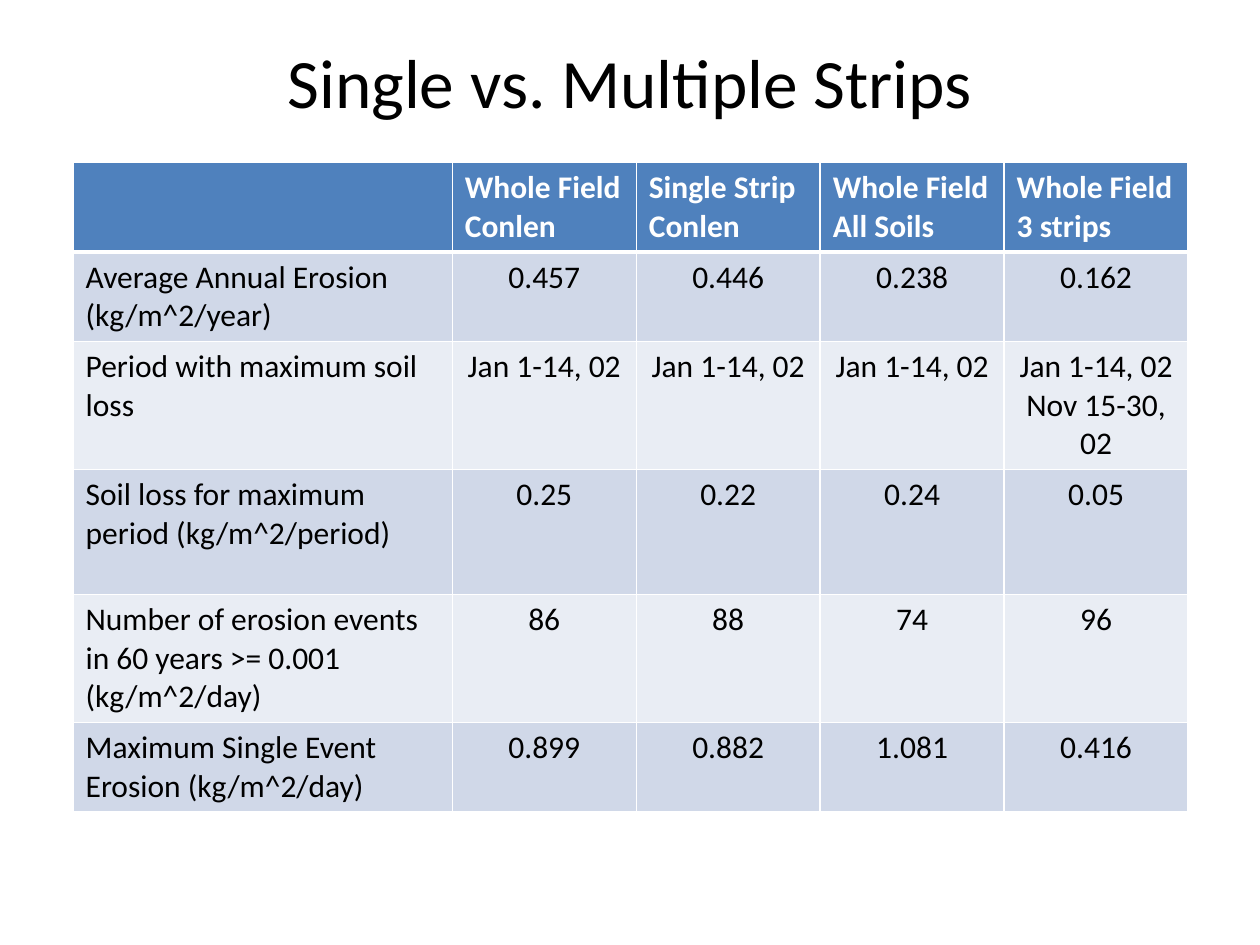
from typing import NamedTuple

from lxml.etree import SubElement
from pptx import Presentation
from pptx.dml.color import RGBColor
from pptx.enum.text import MSO_ANCHOR, MSO_AUTO_SIZE, PP_ALIGN
from pptx.oxml import parse_xml
from pptx.oxml.ns import nsdecls, qn
from pptx.util import Inches, Pt

FONT = "Calibri"
BLACK, WHITE = "000000", "FFFFFF"
HEADER_FILL = "4F81BD"
BAND_FILLS = ("D0D8E8", "E9EDF4")


class Measure(NamedTuple):
    label: str
    values: tuple[str, str, str, str]
    height: float


HEADINGS = ("", "Whole Field Conlen", "Single Strip Conlen",
            "Whole Field All Soils", "Whole Field 3 strips")
HEADER_HEIGHT = 0.71
MEASURES = (
    Measure("Average Annual Erosion (kg/m^2/year)",
            ("0.457", "0.446", "0.238", "0.162"), 0.69),
    Measure("Period with maximum soil loss",
            ("Jan 1-14, 02",) * 3 + ("Jan 1-14, 02 Nov 15-30, 02",), 0.69),
    Measure("Soil loss for maximum period (kg/m^2/period)",
            ("0.25", "0.22", "0.24", "0.05"), 0.99),
    Measure("Number of erosion events in 60 years >= 0.001 (kg/m^2/day)",
            ("86", "88", "74", "96"), 0.99),
    Measure("Maximum Single Event Erosion (kg/m^2/day)",
            ("0.899", "0.882", "1.081", "0.416"), 0.69),
)
COLUMN_WIDTHS = (3.01,) + (1.46,) * 4


def color(value: str) -> RGBColor:
    return RGBColor.from_string(value)


def format_paragraph(paragraph, size: float, text_color: str, bold: bool, alignment) -> None:
    paragraph.alignment = alignment
    font = paragraph.font
    font.name, font.size, font.bold = FONT, Pt(size), bold
    font.color.rgb = color(text_color)


def set_borders(cell, top: float, bottom: float) -> None:
    """Draw white borders, with side lines of one point."""
    properties = cell._tc.get_or_add_tcPr()
    widths = {"lnL": 1, "lnR": 1, "lnT": top, "lnB": bottom}
    for index, (tag, width) in enumerate(widths.items()):
        line = parse_xml(f'<a:{tag} {nsdecls("a")} w="{Pt(width)}"/>')
        fill = SubElement(line, qn("a:solidFill"))
        SubElement(fill, qn("a:srgbClr"), val=WHITE)
        properties.insert(index, line)


def fill_row(table, row: int, texts: tuple[str, ...], fill: str) -> None:
    is_header = row == 0
    for column, text in enumerate(texts):
        cell = table.cell(row, column)
        cell.text = text
        cell.fill.solid()
        cell.fill.fore_color.rgb = color(fill)
        centered = column > 0 and not is_header
        format_paragraph(cell.text_frame.paragraphs[0], 18,
                         WHITE if is_header else BLACK, is_header,
                         PP_ALIGN.CENTER if centered else PP_ALIGN.LEFT)
        set_borders(cell, top=3 if row == 1 else 1, bottom=3 if is_header else 1)


def add_title(slide, text: str) -> None:
    title = slide.shapes.title
    title.left, title.top = Inches(0.5), Inches(0.25)
    title.width, title.height = Inches(9), Inches(0.78)
    frame = title.text_frame
    frame.text = text
    frame.auto_size = MSO_AUTO_SIZE.NONE
    frame.vertical_anchor = MSO_ANCHOR.MIDDLE
    format_paragraph(frame.paragraphs[0], 39.6, BLACK, False, PP_ALIGN.CENTER)


def add_erosion_table(slide) -> None:
    heights = (HEADER_HEIGHT, *(measure.height for measure in MEASURES))
    table = slide.shapes.add_table(
        len(heights), len(COLUMN_WIDTHS), Inches(0.58), Inches(1.29),
        Inches(sum(COLUMN_WIDTHS)), Inches(sum(heights))).table
    for column, width in zip(table.columns, COLUMN_WIDTHS):
        column.width = Inches(width)
    for row, height in zip(table.rows, heights):
        row.height = Inches(height)
    fill_row(table, 0, HEADINGS, HEADER_FILL)
    for index, measure in enumerate(MEASURES):
        fill_row(table, index + 1, (measure.label, *measure.values), BAND_FILLS[index % 2])


def main() -> None:
    presentation = Presentation()
    presentation.slide_width, presentation.slide_height = Inches(10), Inches(7.5)
    slide = presentation.slides.add_slide(presentation.slide_layouts[5])
    add_title(slide, "Single vs. Multiple Strips")
    add_erosion_table(slide)
    presentation.save("out.pptx")


if __name__ == "__main__":
    main()
